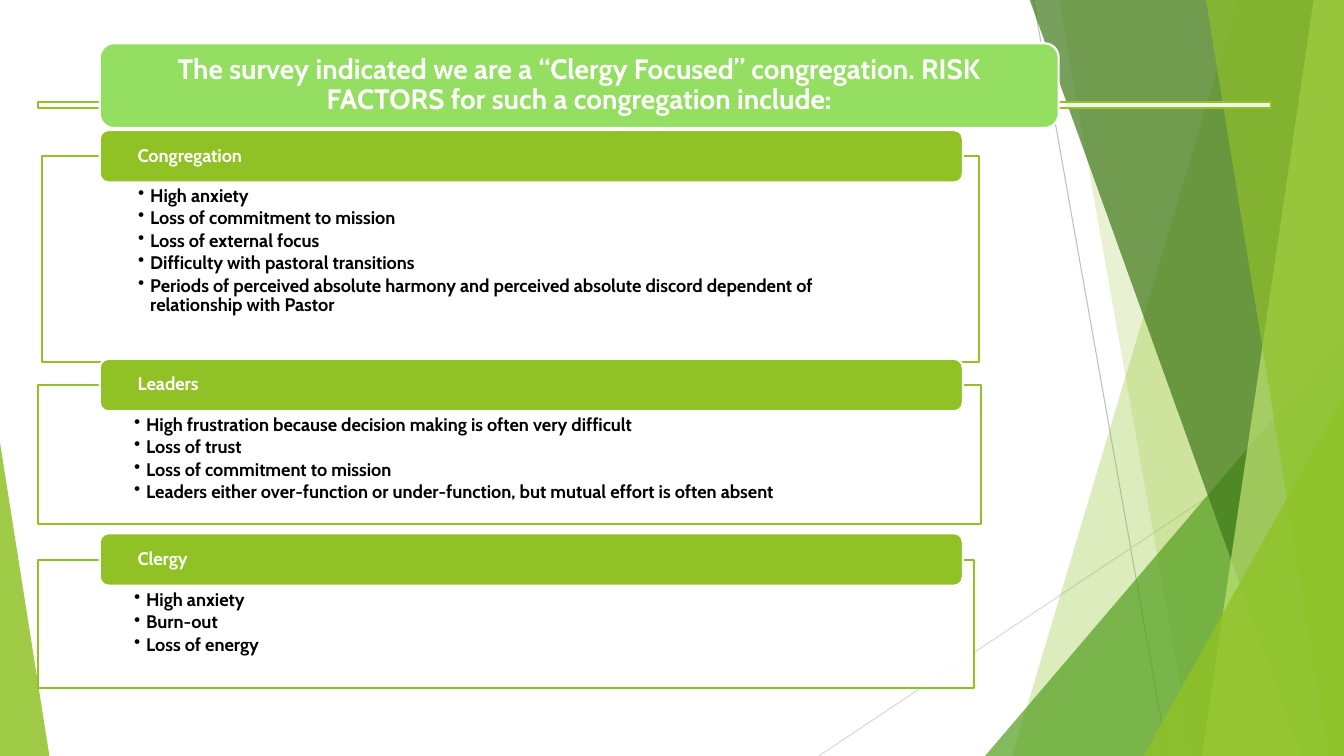
from lxml import etree
from pptx import Presentation
from pptx.dml.color import RGBColor
from pptx.enum import shapes, text
from pptx.oxml.ns import qn
from pptx.util import Inches, Pt

FONT = "Cabin"
WHITE = RGBColor(0xFF, 0xFF, 0xFF)
BLACK = RGBColor(0x00, 0x00, 0x00)
GREEN = RGBColor(0x90, 0xC2, 0x26)
TITLE_GREEN = RGBColor(0x94, 0xDE, 0x61)
MID_GREEN = RGBColor(0x54, 0xA0, 0x21)
DARK_GREEN = RGBColor(0x3F, 0x78, 0x19)
PALE_GREEN = RGBColor(0xC0, 0xE4, 0x74)
GRAY = RGBColor(0xBF, 0xBF, 0xBF)
LIGHT_GRAY = RGBColor(0xD9, 0xD9, 0xD9)

RIGHT, TOP, BOTTOM = 13.33, -0.01, 7.5
HEADER_LEFT, HEADER_WIDTH, HEADER_HEIGHT = 0.99, 8.56, 0.52

TITLE = ("The survey indicated we are a “Clergy Focused” congregation. RISK FACTORS "
         "for such a congregation include:")

# Heading, heading top, box (left, top, width, height), bullets
SECTIONS = [
    ("Congregation", 1.29, (0.42, 1.55, 9.29, 2.04), [
        "High anxiety",
        "Loss of commitment to mission",
        "Loss of external focus",
        "Difficulty with pastoral transitions",
        "Periods of perceived absolute harmony and perceived absolute discord "
        "dependent of relationship with Pastor",
    ]),
    ("Leaders", 3.56, (0.38, 3.82, 9.35, 1.38), [
        "High frustration because decision making is often very difficult",
        "Loss of trust",
        "Loss of commitment to mission",
        "Leaders either over-function or under-function, but mutual effort is often absent",
    ]),
    ("Clergy", 5.29, (0.38, 5.56, 9.28, 1.27), [
        "High anxiety",
        "Burn-out",
        "Loss of energy",
    ]),
]


def paint(sp, fill, alpha=100, line=None):
    """Set fill, transparency and outline."""
    sp.shadow.inherit = False
    sp.fill.solid()
    sp.fill.fore_color.rgb = fill
    if alpha < 100:
        clr = sp._element.spPr.find(qn("a:solidFill"))[0]
        etree.SubElement(clr, qn("a:alpha"), val=str(alpha * 1000))
    if line is None:
        sp.line.fill.background()
    else:
        sp.line.color.rgb = line
        sp.line.width = Pt(1.5)


def add_shape(s, kind, box, fill, alpha=100, line=None):
    sp = s.shapes.add_shape(kind, *(Inches(v) for v in box))
    paint(sp, fill, alpha, line)
    return sp


def add_triangle(s, box, fill, alpha, apex):
    sp = add_shape(s, shapes.MSO_SHAPE.ISOSCELES_TRIANGLE, box, fill, alpha)
    sp.adjustments[0] = apex


def add_band(s, top_x, bottom_x, fill, alpha):
    """Slanted band that reaches the right edge of the slide."""
    fb = s.shapes.build_freeform(Inches(top_x), Inches(TOP))
    corners = [(RIGHT, TOP), (RIGHT, BOTTOM), (bottom_x, BOTTOM)]
    fb.add_line_segments([(Inches(x), Inches(y)) for x, y in corners], close=True)
    paint(fb.convert_to_shape(), fill, alpha)


def add_line(s, x1, y1, x2, y2, color):
    ln = s.shapes.add_connector(shapes.MSO_CONNECTOR.STRAIGHT,
                                Inches(x1), Inches(y1), Inches(x2), Inches(y2))
    ln.line.color.rgb = color
    ln.line.width = Pt(0.75)
    etree.SubElement(ln._element.spPr, qn("a:effectLst"))


def write(sp, lines, size=13, color=WHITE, align=text.PP_ALIGN.LEFT,
          anchor=text.MSO_ANCHOR.MIDDLE, insets=(0.35, 0, 0.35, 0), bullet=False):
    tf = sp.text_frame
    tf.word_wrap = True
    tf.vertical_anchor = anchor
    tf.margin_left, tf.margin_top, tf.margin_right, tf.margin_bottom = map(Inches, insets)
    for i, content in enumerate(lines):
        p = tf.paragraphs[0] if i == 0 else tf.add_paragraph()
        p.alignment = align
        p.line_spacing = 0.9
        if bullet:
            p.space_after = Pt(2)
            pPr = p._p.get_or_add_pPr()
            pPr.set("marL", str(Inches(0.12)))
            pPr.set("indent", str(Inches(-0.12)))
            etree.SubElement(pPr, qn("a:buChar"), char="•")
        r = p.add_run()
        r.text = content
        r.font.name = FONT
        r.font.size = Pt(size)
        r.font.bold = True
        r.font.color.rgb = color


def add_background(s):
    add_line(s, 10.25, 0, 11.58, BOTTOM, GRAY)
    add_line(s, RIGHT, 4.03, 8.12, BOTTOM, LIGHT_GRAY)
    add_band(s, 12.28, 10.04, GREEN, 30)
    add_band(s, 10.5, 11.83, GREEN, 20)
    add_triangle(s, (9.77, 3.33, 3.56, 4.17), MID_GREEN, 72, apex=1)
    add_band(s, 10.21, 12.91, DARK_GREEN, 70)
    add_band(s, 13.03, 11.92, PALE_GREEN, 70)
    add_band(s, 11.96, 13.18, GREEN, 65)
    add_triangle(s, (11.34, 3.93, 1.99, 3.57), GREEN, 80, apex=1)
    add_triangle(s, (0, 4.39, 0.49, 3.11), GREEN, 85, apex=0)


def add_title(s):
    add_shape(s, shapes.MSO_SHAPE.RECTANGLE, (0.38, 1.01, 12.23, 0.06), WHITE, 90, GREEN)
    sp = add_shape(s, shapes.MSO_SHAPE.ROUNDED_RECTANGLE, (HEADER_LEFT, 0.43, 9.51, 0.84),
                   TITLE_GREEN, line=WHITE)
    write(sp, [TITLE], size=20, align=text.PP_ALIGN.CENTER)


def add_section(s, heading, heading_top, box, bullets):
    body = add_shape(s, shapes.MSO_SHAPE.RECTANGLE, box, WHITE, 90, GREEN)
    write(body, bullets, color=BLACK, anchor=text.MSO_ANCHOR.TOP,
          insets=(0.95, 0.3, 0.95, 0.1), bullet=True)
    header = add_shape(s, shapes.MSO_SHAPE.ROUNDED_RECTANGLE,
                       (HEADER_LEFT, heading_top, HEADER_WIDTH, HEADER_HEIGHT),
                       GREEN, line=WHITE)
    write(header, [heading])


def main():
    prs = Presentation()
    prs.slide_width, prs.slide_height = Inches(13.33), Inches(7.5)
    s = prs.slides.add_slide(prs.slide_layouts[6])

    # Slanted green decoration
    add_background(s)
    # Title bar on its rule
    add_title(s)
    # Risk factors by group
    for section in SECTIONS:
        add_section(s, *section)

    prs.save("out.pptx")


if __name__ == "__main__":
    main()
